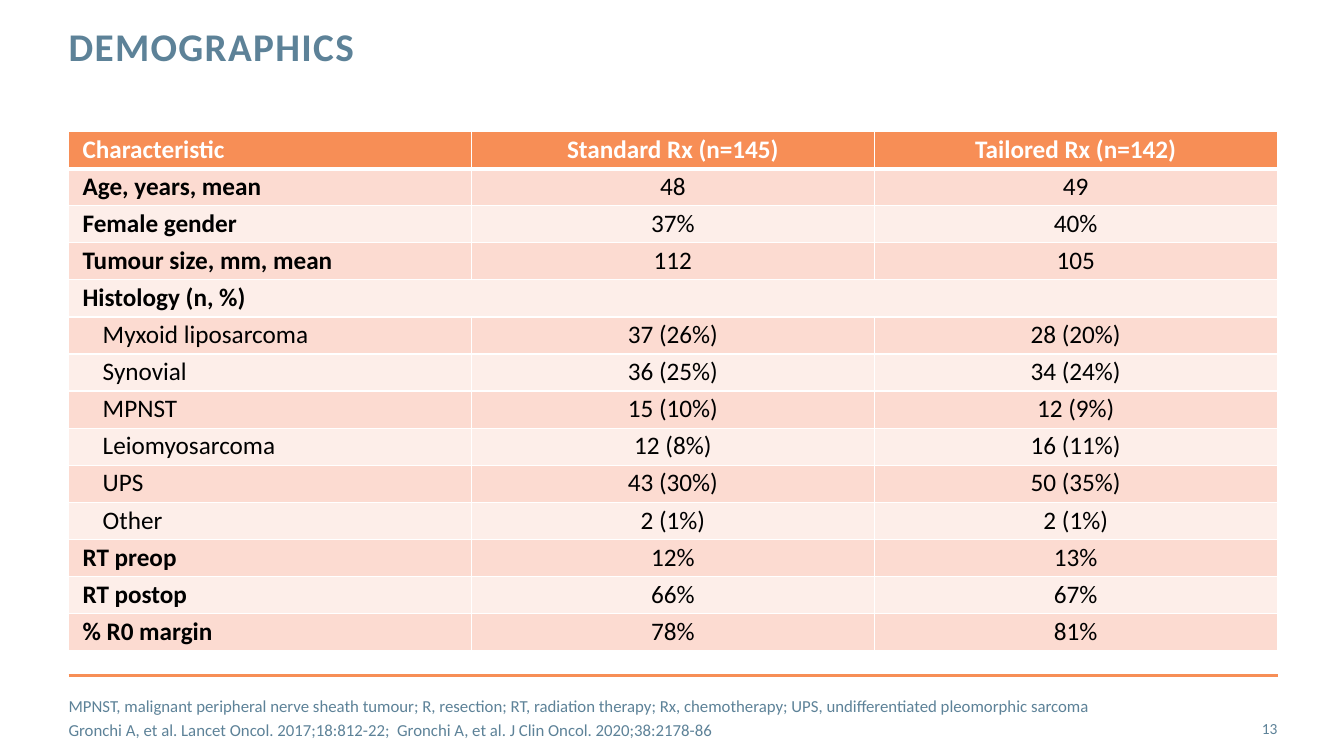
from typing import NamedTuple

from pptx import Presentation
from pptx.dml.color import RGBColor
from pptx.enum.shapes import MSO_CONNECTOR as Connector
from pptx.enum.text import MSO_ANCHOR as Anchor, PP_ALIGN as Align
from pptx.oxml.ns import qn
from pptx.util import Pt
from lxml.etree import SubElement

FONT = "Calibri"
COLORS = {
    "orange": "F78E56",
    "band_dark": "FCDBD1",
    "band_light": "FDEEE9",
    "slate": "5D8298",
    "black": "000000",
    "white": "FFFFFF",
}
LEFT = 49
COLUMN_WIDTH = 287.75
ROW_HEIGHT = 26.5
HEADERS = ("Characteristic", "Standard Rx (n=145)", "Tailored Rx (n=142)")


class Row(NamedTuple):
    label: str
    standard: str = ""
    tailored: str = ""
    subtype: bool = False


class Label(NamedTuple):
    left: float
    top: float
    width: float
    height: float
    lines: tuple[str, ...]
    size: float
    bold: bool = False
    align: Align = Align.LEFT
    anchor: Anchor = Anchor.MIDDLE
    line_height: float | None = None
    tracking: float = 0


ROWS = [
    Row("Age, years, mean", "48", "49"),
    Row("Female gender", "37%", "40%"),
    Row("Tumour size, mm, mean", "112", "105"),
    Row("Histology (n, %)"),
    Row("Myxoid liposarcoma", "37 (26%)", "28 (20%)", True),
    Row("Synovial", "36 (25%)", "34 (24%)", True),
    Row("MPNST", "15 (10%)", "12 (9%)", True),
    Row("Leiomyosarcoma", "12 (8%)", "16 (11%)", True),
    Row("UPS", "43 (30%)", "50 (35%)", True),
    Row("Other", "2 (1%)", "2 (1%)", True),
    Row("RT preop", "12%", "13%"),
    Row("RT postop", "66%", "67%"),
    Row("% R0 margin", "78%", "81%"),
]

LABELS = [
    Label(LEFT, 19.5, 688, 63, ("DEMOGRAPHICS",), 28, bold=True,
          anchor=Anchor.TOP, line_height=30, tracking=1),
    Label(850.5, 506, 62, 29, ("13",), 11, align=Align.RIGHT),
    Label(LEFT, 498, 834, 29, (
        "MPNST, malignant peripheral nerve sheath tumour; R, resection; "
        "RT, radiation therapy; Rx, chemotherapy; "
        "UPS, undifferentiated pleomorphic sarcoma",
        "Gronchi A, et al. Lancet Oncol. 2017;18:812-22;  "
        "Gronchi A, et al. J Clin Oncol. 2020;38:2178-86",
    ), 12),
]


def rgb(name: str) -> RGBColor:
    return RGBColor.from_string(COLORS[name])


def style_runs(p, size: float, color: str, bold: bool) -> None:
    for r in p.runs:
        r.font.name = FONT
        r.font.size = Pt(size)
        r.font.bold = bold
        r.font.color.rgb = rgb(color)


def add_label(slide, label: Label) -> None:
    box = slide.shapes.add_textbox(
        Pt(label.left), Pt(label.top), Pt(label.width), Pt(label.height))
    tf = box.text_frame
    tf.margin_left = tf.margin_top = tf.margin_right = tf.margin_bottom = 0
    tf.word_wrap = True
    tf.vertical_anchor = label.anchor
    tf.text = "\n".join(label.lines)
    for i, p in enumerate(tf.paragraphs):
        p.alignment = label.align
        if i:
            p.space_before = Pt(3)
        if label.line_height:
            p.line_spacing = Pt(label.line_height)
        style_runs(p, label.size, "slate", label.bold)
        if label.tracking:
            for r in p.runs:
                r.font._element.set("spc", str(int(label.tracking * 100)))


def add_rule(slide) -> None:
    s = slide.shapes.add_connector(
        Connector.STRAIGHT, Pt(LEFT), Pt(482.5), Pt(913), Pt(482.5))
    s.line.color.rgb = rgb("orange")
    s.line.width = Pt(2)
    SubElement(s._element.spPr, qn("a:effectLst"))


def set_borders(cell, top: float, bottom: float) -> None:
    """White edges; must run before the fill, which follows them in the XML."""
    tc_pr = cell._tc.get_or_add_tcPr()
    for side, width in (("L", 1), ("R", 1), ("T", top), ("B", bottom)):
        ln = SubElement(tc_pr, qn(f"a:ln{side}"), w=str(Pt(width)))
        fill = SubElement(ln, qn("a:solidFill"))
        SubElement(fill, qn("a:srgbClr"), val=COLORS["white"])


def fill_cell(cell, text: str, row: int, column: int, subtype: bool) -> None:
    header = row == 0
    set_borders(cell, top=3 if row == 1 else 1, bottom=3 if header else 1)
    cell.fill.solid()
    band = "band_dark" if row % 2 else "band_light"
    cell.fill.fore_color.rgb = rgb("orange" if header else band)
    cell.margin_left = cell.margin_right = Pt(10)
    cell.margin_top = cell.margin_bottom = Pt(2)
    if not text:
        return
    cell.text_frame.text = text
    p = cell.text_frame.paragraphs[0]
    p.alignment = Align.CENTER if column else Align.LEFT
    if subtype and column == 0:
        p_pr = p._p.get_or_add_pPr()
        p_pr.set("marL", "0")
        p_pr.set("indent", str(Pt(14.4)))
    bold = header or (column == 0 and not subtype)
    style_runs(p, 18, "white" if header else "black", bold)


def add_demographics(slide) -> None:
    rows = [Row(*HEADERS), *ROWS]
    table = slide.shapes.add_table(
        len(rows), len(HEADERS), Pt(LEFT), Pt(94),
        Pt(COLUMN_WIDTH * len(HEADERS)), Pt(ROW_HEIGHT * len(rows))).table
    table.horz_banding = False
    for column in table.columns:
        column.width = Pt(COLUMN_WIDTH)
    for i, row in enumerate(rows):
        table.rows[i].height = Pt(ROW_HEIGHT)
        for j, text in enumerate((row.label, row.standard, row.tailored)):
            fill_cell(table.cell(i, j), text, i, j, row.subtype)
        if not row.standard:
            table.cell(i, 0).merge(table.cell(i, len(HEADERS) - 1))


def main() -> None:
    prs = Presentation()
    prs.slide_width, prs.slide_height = Pt(960), Pt(540)
    slide = prs.slides.add_slide(prs.slide_layouts[6])
    add_rule(slide)
    add_demographics(slide)
    for label in LABELS:
        add_label(slide, label)
    prs.save("out.pptx")


if __name__ == "__main__":
    main()
